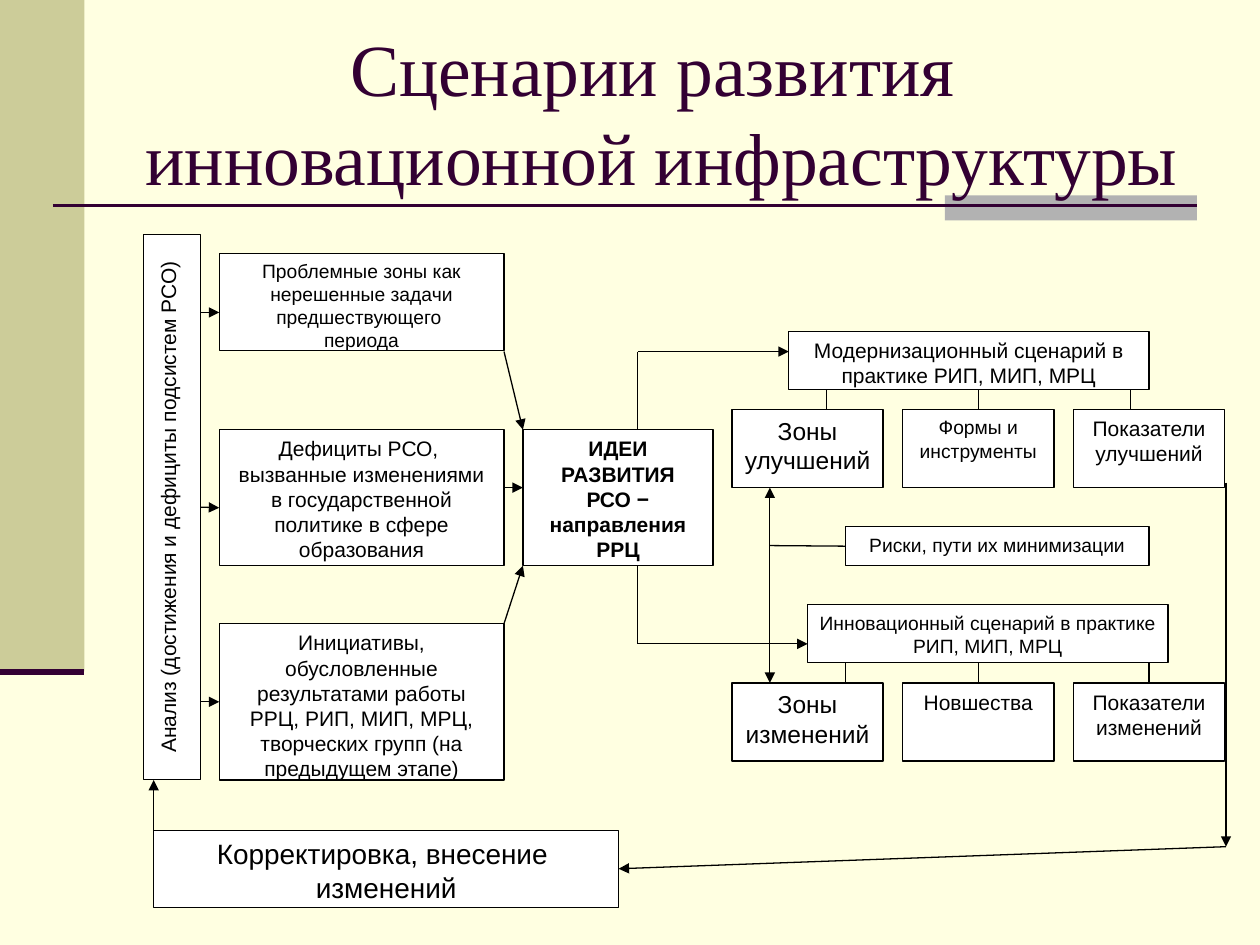
from dataclasses import dataclass

from lxml import etree
from pptx import Presentation
from pptx.dml.color import RGBColor
from pptx.enum.shapes import MSO_CONNECTOR, MSO_SHAPE
from pptx.enum.text import MSO_ANCHOR, PP_ALIGN
from pptx.oxml.ns import qn
from pptx.util import Pt

RECTANGLE = MSO_SHAPE.RECTANGLE
STRAIGHT = MSO_CONNECTOR.STRAIGHT
CENTER = PP_ALIGN.CENTER
TOP, MIDDLE = MSO_ANCHOR.TOP, MSO_ANCHOR.MIDDLE
SITE_TOP, SITE_LEFT, SITE_RIGHT = 0, 1, 3
EMU_PER_PX = 9144  # 100 px to the inch


@dataclass(frozen=True)
class Theme:
    background: str = "FFFFE1"
    band: str = "CCCC99"
    accent: str = "B2B2B2"
    title: str = "330033"
    ink: str = "000000"
    paper: str = "FFFFFF"
    title_font: str = "Times New Roman"
    body_font: str = "Arial"
    dash_font: str = "Roboto"
    title_size: int = 42
    small: int = 11
    body: int = 12
    large: int = 14
    feedback: int = 16
    thin: float = 0.75
    rule: float = 1.5
    thick: float = 3.5


THEME = Theme()


def emu(*lengths):
    return [round(length * EMU_PER_PX) for length in lengths]


def color(value):
    return RGBColor.from_string(value)


def write(shape, text, size=THEME.body, font=THEME.body_font, ink=THEME.ink,
          bold=False, anchor=TOP, inset=9):
    """Write text, given as a string or as (string, font) pairs; newlines are line breaks."""
    frame = shape.text_frame
    frame.word_wrap = True
    frame.vertical_anchor = anchor
    frame.margin_left, frame.margin_right = emu(inset, inset)
    para = frame.paragraphs[0]
    para.alignment = CENTER
    pieces = [(text, font)] if isinstance(text, str) else text
    for piece, face in pieces:
        for index, line in enumerate(piece.split("\n")):
            if index:
                para.add_line_break()
            span = para.add_run()
            span.text = line
            span.font.name = face
            span.font.size = Pt(size)
            span.font.bold = bold
            span.font.color.rgb = color(ink)


def add_rectangle(page, box, fill, line=None):
    shape = page.shapes.add_shape(RECTANGLE, *emu(*box))
    shape.shadow.inherit = False
    shape.fill.solid()
    shape.fill.fore_color.rgb = color(fill)
    if line:
        shape.line.color.rgb = color(line)
        shape.line.width = Pt(THEME.thin)
    else:
        shape.line.fill.background()
    return shape


def add_node(page, box, text, **text_format):
    shape = add_rectangle(page, box, THEME.paper, THEME.ink)
    write(shape, text, **text_format)
    return shape


def add_line(page, start, end, arrow=False, ink=THEME.ink, width=THEME.thin):
    line = page.shapes.add_connector(STRAIGHT, *emu(*start, *end))
    line.line.color.rgb = color(ink)
    line.line.width = Pt(width)
    if arrow:
        etree.SubElement(line.line._get_or_add_ln(), qn("a:tailEnd"), type="triangle")
    etree.SubElement(line._element.spPr, qn("a:effectLst"))
    return line


def add_backdrop(page, box):
    left, top, width, height = box
    page.background.fill.solid()
    page.background.fill.fore_color.rgb = color(THEME.background)
    add_rectangle(page, (left, top, 67, 533), THEME.band)
    add_rectangle(page, (left + 750, top + 155, 200, 20), THEME.accent)
    add_line(page, (left + 42, top + 163), (left + 950, top + 163),
             ink=THEME.title, width=THEME.rule)
    add_line(page, (left, top + 533), (left + 67, top + 533),
             ink=THEME.title, width=THEME.thick)


def add_title(page, box, text):
    write(page.shapes.add_textbox(*emu(*box)), text, size=THEME.title_size,
          font=THEME.title_font, ink=THEME.title, anchor=MIDDLE, inset=10)


def add_analysis(page, box):
    """The vertical analysis bar and the three sources of ideas it leads to."""
    left, top, width, height = box
    bar_width, source_left = 45, 60
    bar = add_node(page, (left, top, bar_width, height),
                   "Анализ (достижения и дефициты подсистем РСО)")
    bar.text_frame._txBody.bodyPr.set("vert", "vert270")
    sources = [
        (15, 77, THEME.small, "Проблемные зоны как нерешенные задачи предшествующего \nпериода"),
        (155, 108, THEME.body, "Дефициты РСО, \nвызванные изменениями в государственной "
                               "политике в сфере образования"),
        (309, 124, THEME.body, "Инициативы, обусловленные результатами работы РРЦ, РИП, МИП, "
                               "МРЦ, творческих групп (на предыдущем этапе)"),
    ]
    for offset, source_height, size, text in sources:
        add_node(page, (left + source_left, top + offset, width - source_left, source_height),
                 text, size=size)
    arrows = [add_line(page, (left + bar_width, top + y), (left + source_left, top + y), arrow=True)
              for y in (62, 217, 371)]
    arrows[1].begin_connect(bar, SITE_RIGHT)


def add_ideas(page, box):
    """The ideas box, the arrows into it and the elbows out to both scenarios."""
    left, top, width, height = box
    add_node(page, box, [("ИДЕИ РАЗВИТИЯ РСО", THEME.body_font),
                         ("\u00a0–", THEME.dash_font),
                         (" направления РРЦ", THEME.body_font)], bold=True)
    for start, end in ((-62, 0), (46, 46), (154, height)):
        add_line(page, (left - 15, top + start), (left, top + end), arrow=True)
    stem = left + 91
    for edge, turn, target in ((0, -62, 211), (height, height + 62, 226)):
        add_line(page, (stem, top + edge), (stem, top + turn))
        add_line(page, (stem, top + turn), (left + target, top + turn), arrow=True)


def add_scenario(page, box, header, header_left, header_size, parts):
    """A scenario header joined by ticks to a row of equally spaced parts."""
    left, top, width, height = box
    header_width, header_height, part_width, part_top = 286, 46, 120, 62
    add_node(page, (left + header_left, top, header_width, header_height),
             header, size=header_size)
    step = (width - part_width) / (len(parts) - 1)
    nodes = [add_node(page, (left + step * index, top + part_top, part_width, height - part_top),
                      text, size=size)
             for index, (text, size) in enumerate(parts)]
    ticks = [add_line(page, (left + x, top + header_height), (left + x, top + part_top))
             for x in (header_left + 30, width / 2, header_left + 271)]
    ticks[1].end_connect(nodes[1], SITE_TOP)


def add_risks(page, box):
    """The risks box and the two-way arrow between the zones of both scenarios."""
    left, top, width, height = box
    axis, label_left, label_top, label_height = left, 60, 31, 31
    label = add_node(page, (left + label_left, top + label_top, width - label_left, label_height),
                     "Риски, пути их минимизации", size=THEME.small)
    middle = top + label_top + label_height // 2
    for end in (top, top + height):
        add_line(page, (axis, middle), (axis, end), arrow=True)
    branch = add_line(page, (axis, middle), (left + label_left, middle))
    branch.end_connect(label, SITE_LEFT)


def add_feedback(page, box):
    """The correction box with the return path from the indicators to the analysis."""
    left, top, width, height = box
    right = left + width
    add_line(page, (left, top + 303), (left, top + 236), arrow=True)
    node = add_node(page, (left, top + 276, 369, height - 276),
                    "Корректировка, внесение \nизменений", size=THEME.feedback)
    add_line(page, (right, top), (right, top + 289), arrow=True)
    back = add_line(page, (right, top + 289), (left + 369, top + 304), arrow=True)
    back.end_connect(node, SITE_RIGHT)


def main():
    deck = Presentation()
    deck.slide_width, deck.slide_height = emu(1000, 750)
    page = deck.slides.add_slide(deck.slide_layouts[6])
    add_backdrop(page, (0, 0, 1000, 750))
    add_title(page, (100, 21, 850, 135), "Сценарии развития \nинновационной инфраструктуры")
    add_analysis(page, (114, 186, 286, 433))
    add_ideas(page, (415, 341, 151, 108))
    add_scenario(page, (581, 263, 391, 124), "Модернизационный сценарий в практике РИП, МИП, МРЦ",
                 45, THEME.body, [("Зоны улучшений", THEME.large),
                                  ("Формы и инструменты", THEME.small),
                                  ("Показатели улучшений", THEME.body)])
    add_scenario(page, (581, 480, 391, 124), "Инновационный сценарий в практике РИП, МИП, МРЦ",
                 60, THEME.small, [("Зоны изменений", THEME.large),
                                   ("Новшества", THEME.body),
                                   ("Показатели изменений", THEME.body)])
    add_risks(page, (611, 387, 301, 155))
    add_feedback(page, (122, 383, 851, 337))
    deck.save("out.pptx")


if __name__ == "__main__":
    main()
